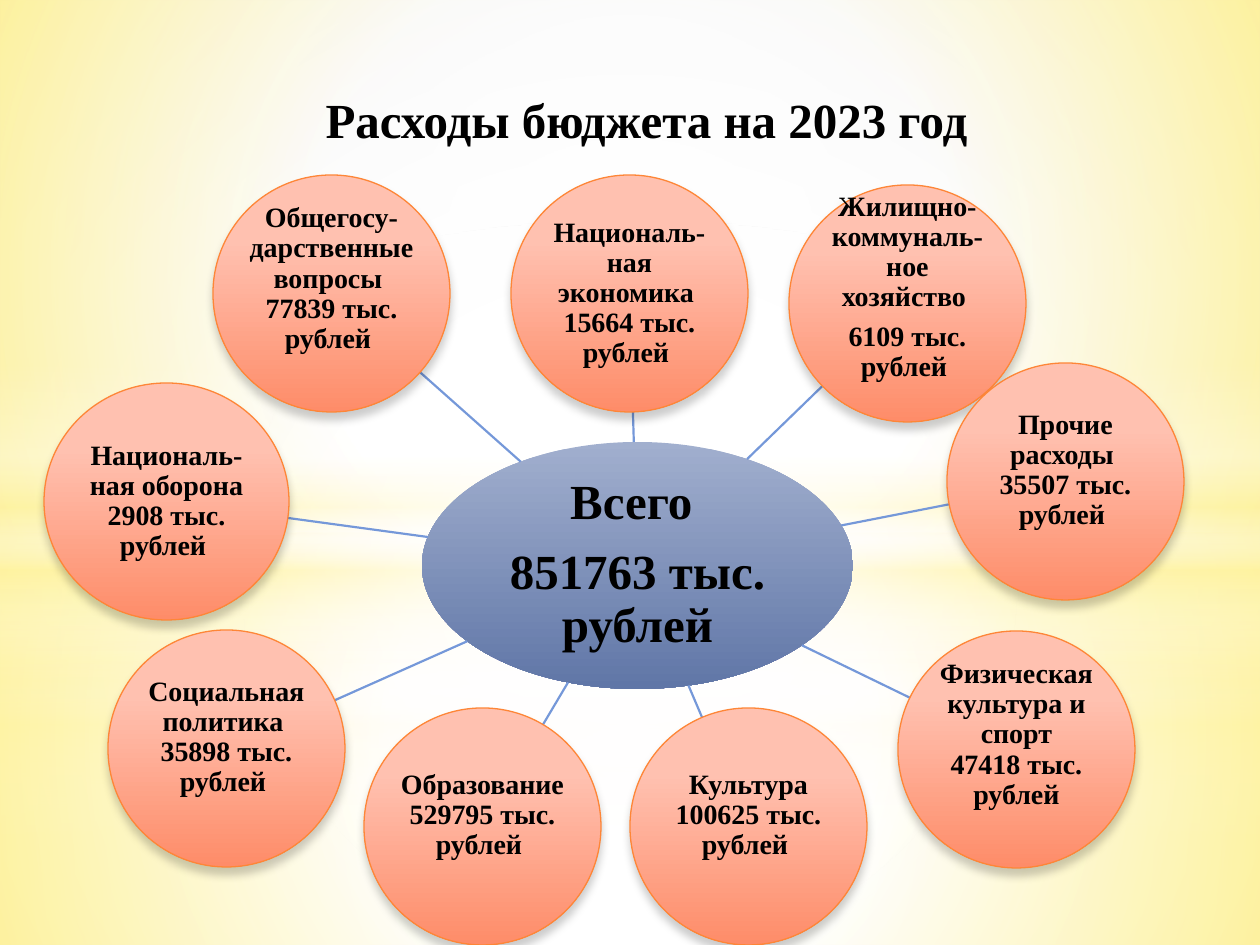
import math

import pptx
import pptx.dml.color
import pptx.enum.shapes
import pptx.enum.text
import pptx.oxml
import pptx.oxml.ns
import pptx.util

PX = 914400 // 126
FONT = "Times New Roman"
WHITE, YELLOW = "FFFFFF", "FFF39D"
RECT = pptx.enum.shapes.MSO_SHAPE.RECTANGLE
OVAL = pptx.enum.shapes.MSO_SHAPE.OVAL
CENTERED = (50, 50, 50, 50)
NS = pptx.oxml.ns.nsdecls("a")

BAND = [(0, WHITE, 0), (29, WHITE, 30), (45, YELLOW, 40),
        (55, WHITE, 26), (65, YELLOW, 60), (100, WHITE, 0)]
# shape, top, height, gradient stops, focus (None means top to bottom)
BACKDROP = [
    (RECT, 703, 242, [(0, WHITE, 91), (37, WHITE, 76), (100, YELLOW, 79)], CENTERED),
    (RECT, 0, 703, [(0, WHITE, 89), (48, WHITE, 62), (100, YELLOW, 79)], CENTERED),
    (RECT, 519, 315, BAND, None),
    (OVAL, 221, 703, [(0, WHITE, 100), (56, WHITE, 0)], CENTERED),
    (RECT, 533, 412, [(0, WHITE, 92), (37, WHITE, 77), (100, YELLOW, 80)], CENTERED),
    (RECT, 0, 533, [(0, WHITE, 90), (48, WHITE, 63), (100, YELLOW, 80)], CENTERED),
    (RECT, 365, 315, BAND, None),
    (OVAL, 221, 703, [(0, WHITE, 100), (54, WHITE, 0)], CENTERED),
]

HUB = (422, 442, 431, 247)
SIZE = 237
# left, top, width, paragraphs, space after a paragraph (pt), bottom inset
EXPENSES = [
    (213, 175, SIZE, ["Общегосу-дарственные вопросы ", "77839 тыс. рублей "], 0, 30),
    (44, 383, 245, ["Националь-ная оборона", "2908 тыс. рублей "], 0, 1),
    (789, 185, SIZE, ["Жилищно-коммуналь-ное хозяйство ", "6109 тыс. рублей "], 5.6, 33),
    (947, 363, SIZE, ["Прочие расходы ", "35507 тыс. рублей "], 0, 23),
    (898, 631, SIZE, ["Физическая культура и спорт", "47418 тыс. рублей"], 0, 30),
    (630, 708, SIZE, ["Культура", "100625 тыс. рублей "], 0, 23),
    (364, 708, SIZE, ["Образование", "529795 тыс. рублей "], 0, 23),
    (108, 630, SIZE, ["Социальная политика ", "35898 тыс. рублей "], 0, 23),
    (511, 175, SIZE, ["Националь-ная экономика ", "15664 тыс. рублей "], 0, 1),
]


def px(*values):
    return [round(v * PX) for v in values]


def rgb(color):
    return pptx.dml.color.RGBColor.from_string(color)


def set_gradient(fill, holder, stops, focus=None):
    """Fill with (position, colour, opacity) stops, all in percent."""
    gs = "".join(
        f'<a:gs pos="{pos * 1000}"><a:srgbClr val="{color}">'
        f'<a:alpha val="{opacity * 1000}"/></a:srgbClr></a:gs>'
        for pos, color, opacity in stops)
    if focus:
        l, t, r, b = (v * 1000 for v in focus)
        shade = (f'<a:path path="circle"><a:fillToRect l="{l}" t="{t}" '
                 f'r="{r}" b="{b}"/></a:path>')
    else:
        shade = '<a:lin ang="5400000" scaled="0"/>'
    fill.solid()
    solid = holder.find(pptx.oxml.ns.qn("a:solidFill"))
    holder.replace(solid, pptx.oxml.parse_xml(
        f'<a:gradFill {NS} rotWithShape="1"><a:gsLst>{gs}</a:gsLst>{shade}</a:gradFill>'))


def add_gradient_shape(s, kind, box, stops, focus=None):
    sp = s.shapes.add_shape(kind, *px(*box))
    sp.shadow.inherit = False
    set_gradient(sp.fill, sp.element.spPr, stops, focus)
    sp.line.fill.background()
    return sp


def set_text(sp, paragraphs, size, spacing=1.0, after=0):
    tf = sp.text_frame
    tf.word_wrap = True
    tf.text = "\n".join(paragraphs)
    for p in tf.paragraphs:
        p.alignment = pptx.enum.text.PP_ALIGN.CENTER
        p.line_spacing = spacing
        p.space_after = pptx.util.Pt(after)
        for r in p.runs:
            r.font.name = FONT
            r.font.size = pptx.util.Pt(size)
            r.font.bold = True
            r.font.color.rgb = rgb("000000")
    return tf


def set_insets(tf, inset, bottom):
    tf.vertical_anchor = pptx.enum.text.MSO_ANCHOR.MIDDLE
    tf.margin_left, tf.margin_top, tf.margin_right, tf.margin_bottom = px(
        inset, inset, inset, bottom)


def center(box):
    left, top, width, height = box
    return left + width / 2, top + height / 2


def edge_point(box, target):
    """Point where the ellipse in box meets the line from its centre to target."""
    cx, cy = center(box)
    dx, dy = target[0] - cx, target[1] - cy
    t = 1 / math.hypot(dx / (box[2] / 2), dy / (box[3] / 2))
    return cx + dx * t, cy + dy * t


def add_spoke(s, box):
    start = edge_point(HUB, center(box))
    end = edge_point(box, center(HUB))
    line = s.shapes.add_connector(
        pptx.enum.shapes.MSO_CONNECTOR.STRAIGHT, *px(*start, *end))
    line.line.color.rgb = rgb("7598D9")
    line.line.width = pptx.util.Pt(1.25)
    line.element.spPr.append(pptx.oxml.parse_xml(f"<a:effectLst {NS}/>"))


def add_expense(s, box, paragraphs, after, bottom):
    sp = add_gradient_shape(s, OVAL, box, [(28, "FFC1B0", 100), (100, "FE8C69", 100)])
    sp.line.color.rgb = rgb("FE8637")
    sp.line.width = pptx.util.Pt(0.75)
    effects = sp.element.spPr.find(pptx.oxml.ns.qn("a:effectLst"))
    effects.append(pptx.oxml.parse_xml(
        f'<a:outerShdw {NS} blurRad="63500" dist="50800" dir="5400000" rotWithShape="0">'
        '<a:srgbClr val="000000"><a:alpha val="20000"/></a:srgbClr></a:outerShdw>'))
    set_insets(set_text(sp, paragraphs, 16, 0.9, after), 1, bottom)


def add_title(s, text):
    sp = s.shapes.add_textbox(*px(34, 96, 1225, 59))
    tf = set_text(sp, [text], 28)
    tf.vertical_anchor = pptx.enum.text.MSO_ANCHOR.BOTTOM


def main():
    prs = pptx.Presentation()
    prs.slide_width, prs.slide_height = px(1260, 945)
    s = prs.slides.add_slide(prs.slide_layouts[6])

    fill = s.background.fill
    fill.solid()
    bg = s.element.find(".//" + pptx.oxml.ns.qn("p:bgPr"))
    set_gradient(fill, bg, [(0, WHITE, 100), (42, WHITE, 100), (100, "D1D1D1", 100)],
                 (24, 44, 24, 12))
    for kind, top, height, stops, focus in BACKDROP:
        add_gradient_shape(s, kind, (0, top, 1260, height), stops, focus)

    hub = add_gradient_shape(s, OVAL, HUB, [(0, "A1AFCE", 100), (100, "6076A7", 100)])
    set_insets(set_text(hub, ["Всего ", "851763 тыс. рублей"], 28, 0.9, 9.8), 2, 2)
    for left, top, width, paragraphs, after, bottom in EXPENSES:
        box = (left, top, width, SIZE)
        add_spoke(s, box)
        add_expense(s, box, paragraphs, after, bottom)
    add_title(s, "Расходы бюджета на 2023 год")

    prs.save("out.pptx")


if __name__ == "__main__":
    main()
